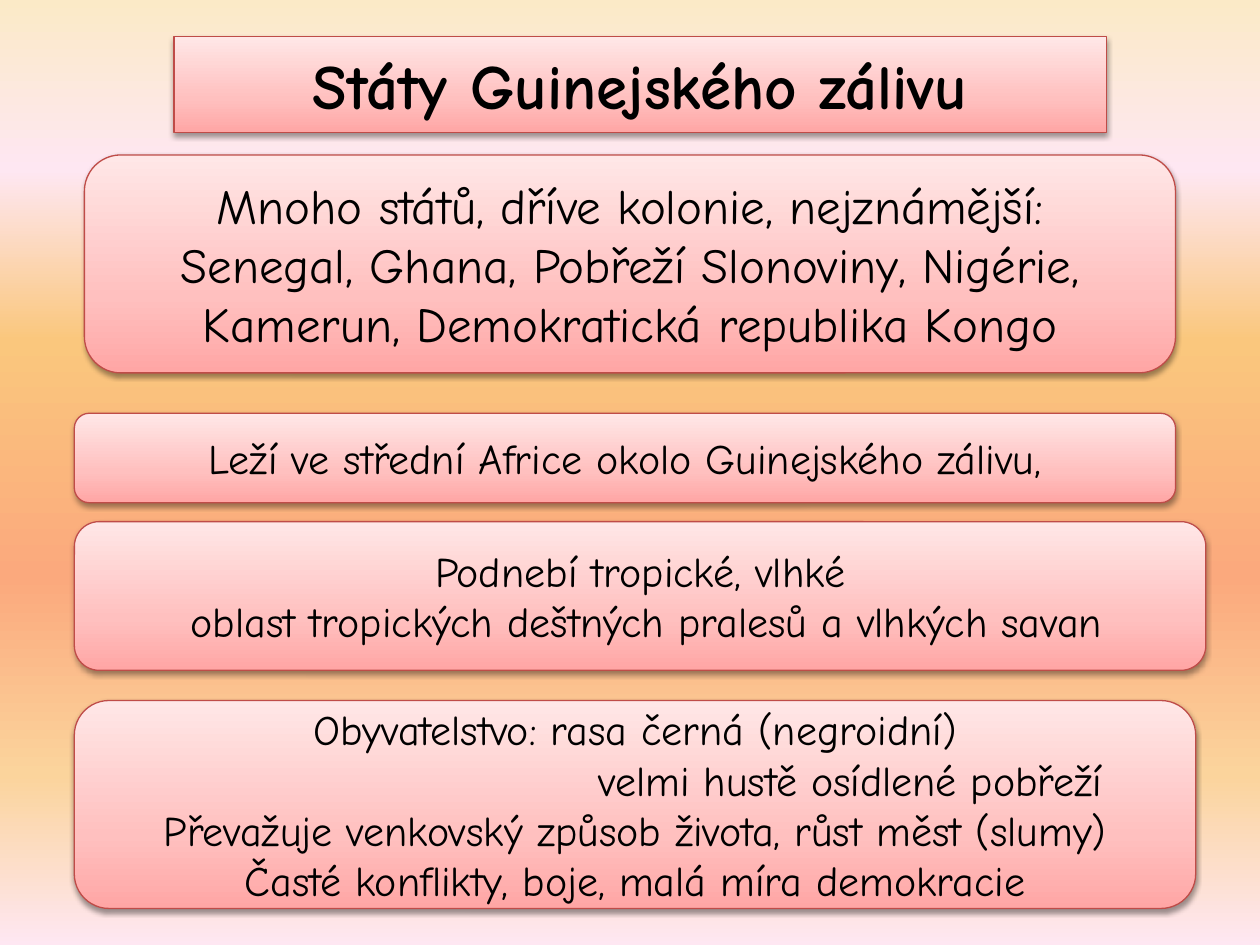
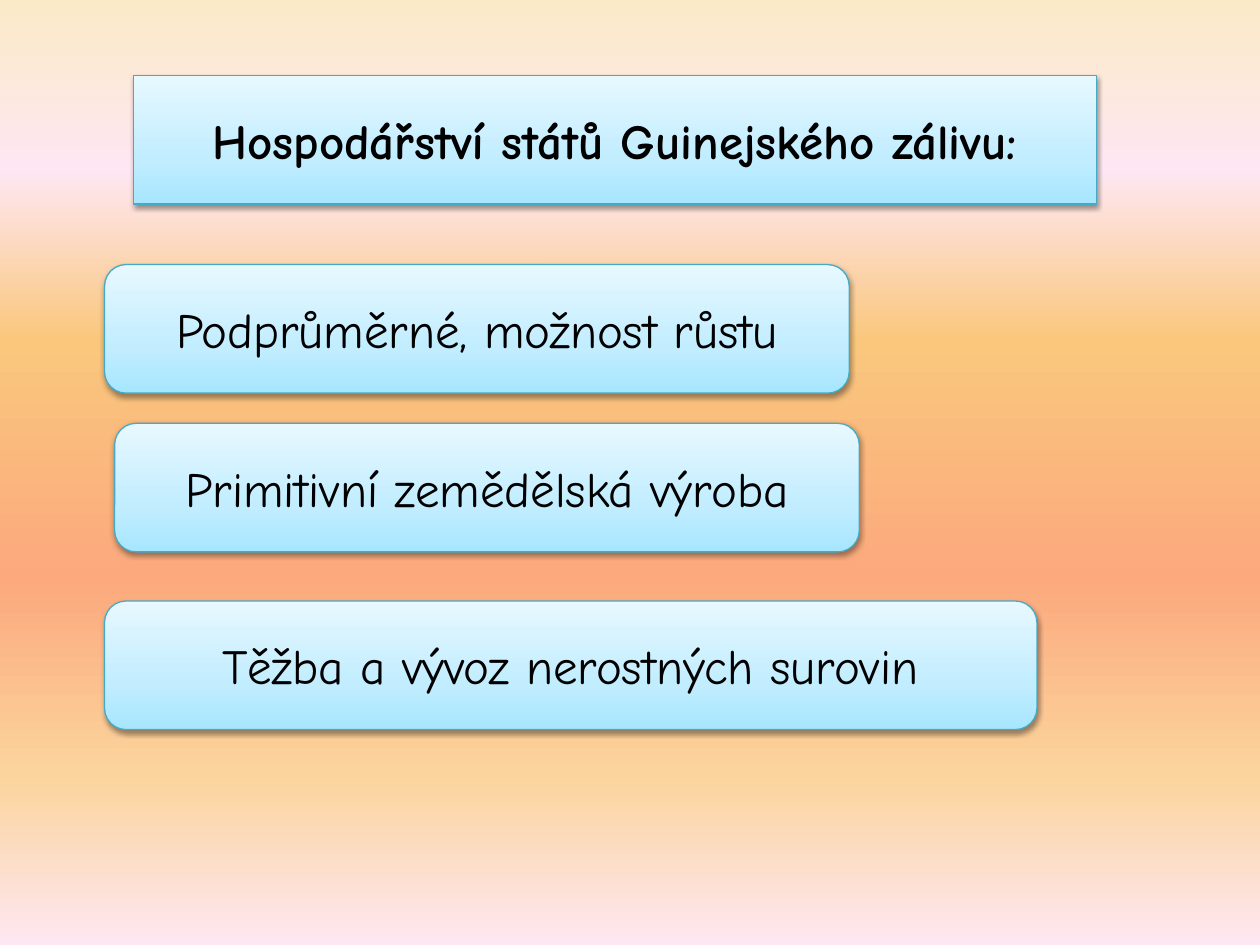
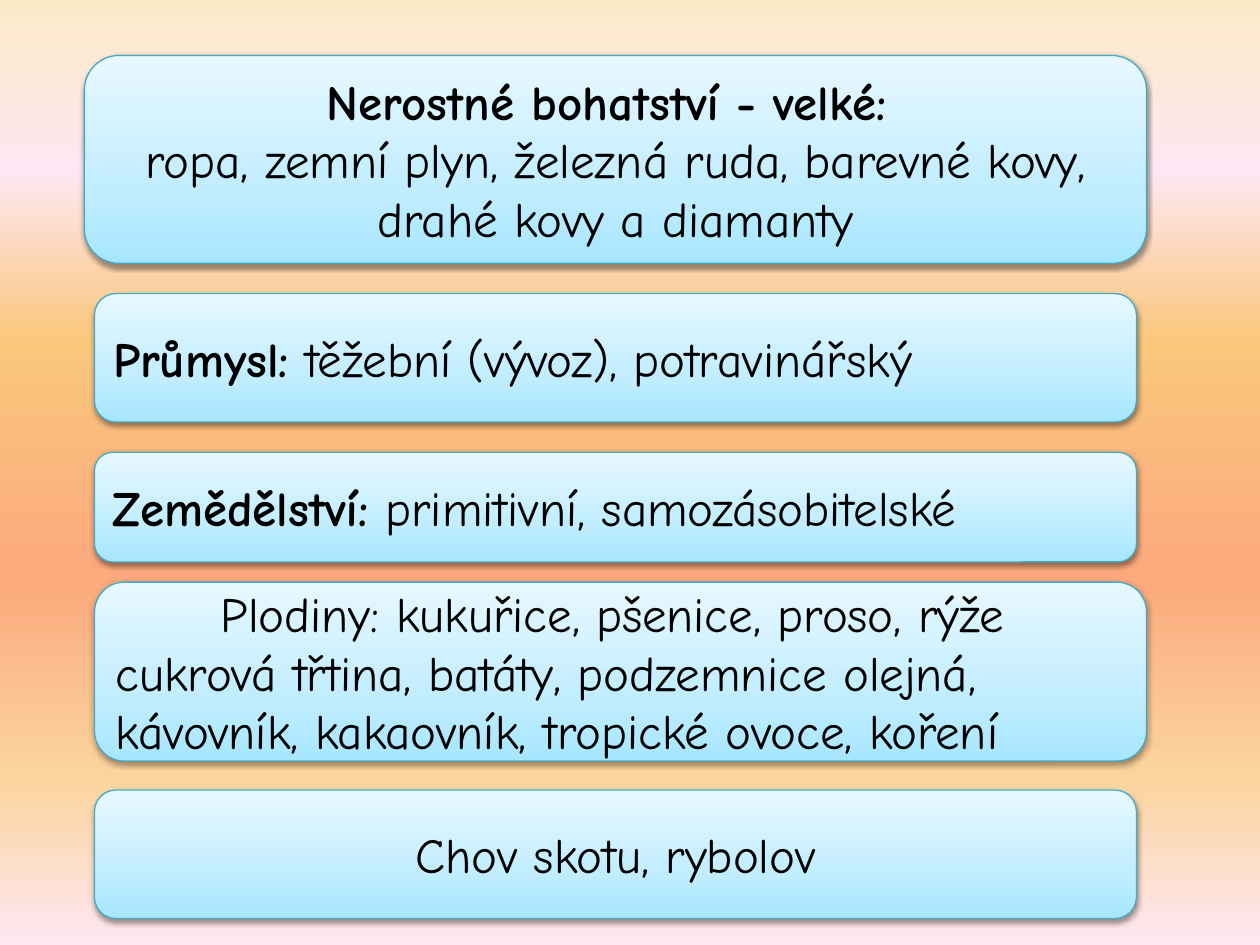
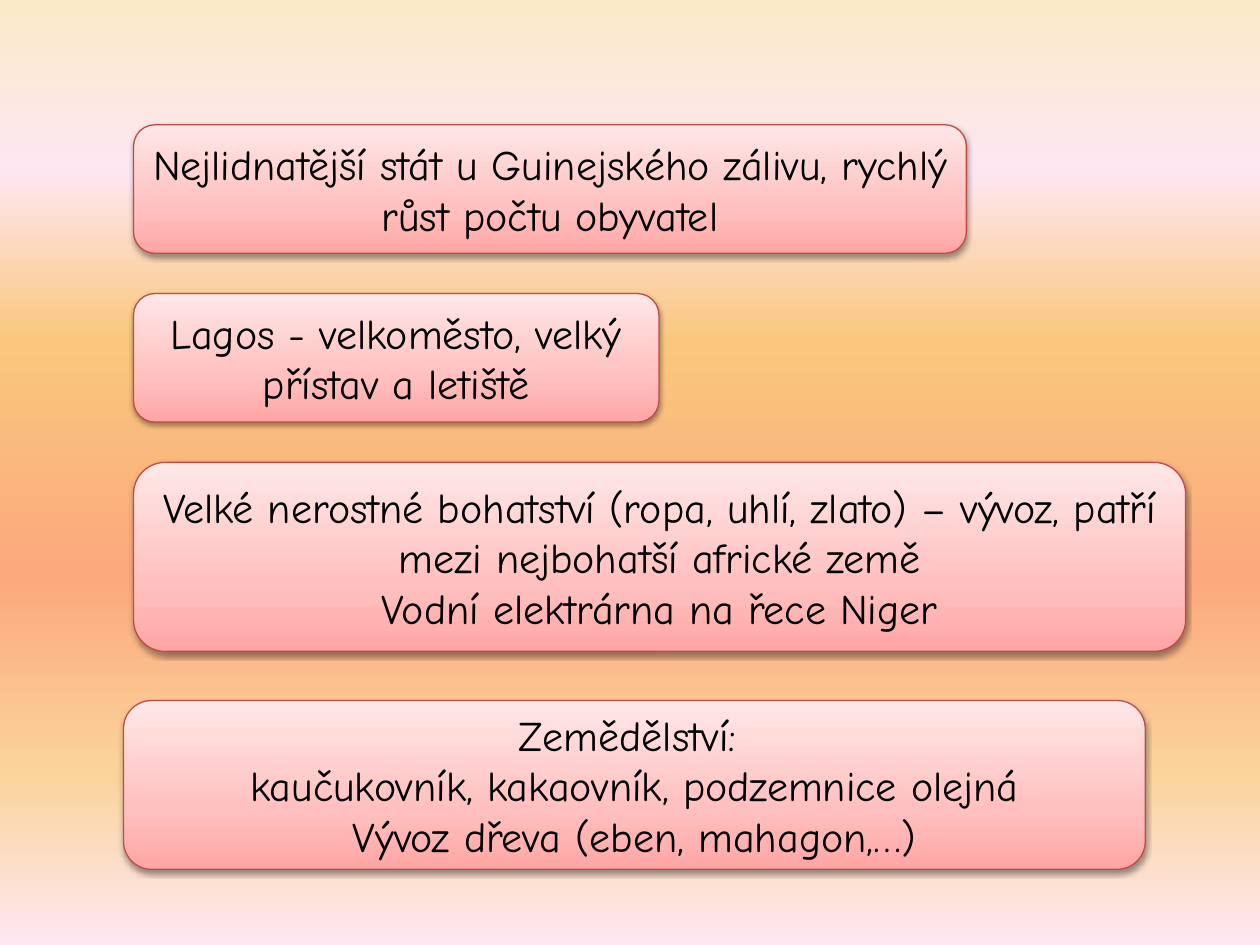
from copy import deepcopy
from dataclasses import dataclass

from lxml import etree
from pptx import Presentation
from pptx import util as u
from pptx.dml.color import RGBColor
from pptx.enum import shapes, text
from pptx.oxml import ns

FONT = "Comic Neue"
TITLE_ONLY, BLANK = 5, 6
CENTER, LEFT = text.PP_ALIGN.CENTER, text.PP_ALIGN.LEFT

BLACK = RGBColor(0x00, 0x00, 0x00)
CREAM = RGBColor(0xFB, 0xEA, 0xC7)
BLUSH = RGBColor(0xFE, 0xE7, 0xF2)
AMBER = RGBColor(0xFA, 0xC7, 0x7D)
CORAL = RGBColor(0xFB, 0xA9, 0x7D)
SAND = RGBColor(0xFB, 0xD4, 0x9C)
RED_LINE = RGBColor(0xBF, 0x4C, 0x48)
RED_DARK = RGBColor(0xFF, 0xA6, 0xA5)
RED_MID = RGBColor(0xFF, 0xC0, 0xBF)
RED_LIGHT = RGBColor(0xFF, 0xE7, 0xE7)
BLUE_LINE = RGBColor(0x46, 0xAA, 0xC5)
BLUE_DARK = RGBColor(0xA7, 0xE6, 0xFF)
BLUE_MID = RGBColor(0xC1, 0xED, 0xFF)
BLUE_LIGHT = RGBColor(0xE7, 0xF8, 0xFF)

SUNSET = [(0, CREAM), (0.18, BLUSH), (0.36, AMBER),
          (0.61, CORAL), (0.82, SAND), (1, BLUSH)]


@dataclass
class Theme:
    line: RGBColor
    stops: list


@dataclass
class Line:
    text: str
    lead: str = ""
    bold: bool = False
    align: int = CENTER
    indent: float = 0


RED = Theme(RED_LINE, [(0, RED_DARK), (0.35, RED_MID), (1, RED_LIGHT)])
BLUE = Theme(BLUE_LINE, [(0, BLUE_DARK), (0.35, BLUE_MID), (1, BLUE_LIGHT)])


def set_gradient(fill, stops, angle):
    fill.gradient()
    fill.gradient_angle = angle
    first = fill.gradient_stops[0]._gs
    for _ in stops[2:]:
        first.getparent().append(deepcopy(first))
    for stop, (position, color) in zip(fill.gradient_stops, stops):
        stop.position = position
        stop.color.rgb = color


def add_shadow(box):
    box.shadow.inherit = False
    effects = box._element.spPr.find(ns.qn("a:effectLst"))
    shadow = etree.SubElement(effects, ns.qn("a:outerShdw"), blurRad="40000",
                              dist="20000", dir="5400000", rotWithShape="0")
    color = etree.SubElement(shadow, ns.qn("a:srgbClr"), val=str(BLACK))
    etree.SubElement(color, ns.qn("a:alpha"), val="38000")


def style_box(box, theme):
    set_gradient(box.fill, theme.stops, 90)
    box.line.color.rgb = theme.line
    box.line.width = u.Pt(0.75)
    add_shadow(box)


def write_lines(box, lines, size):
    frame = box.text_frame
    frame.word_wrap = True
    frame.auto_size = text.MSO_AUTO_SIZE.NONE
    frame.vertical_anchor = text.MSO_ANCHOR.MIDDLE
    for number, line in enumerate(lines):
        para = frame.add_paragraph() if number else frame.paragraphs[0]
        para.alignment = line.align
        para.font.name = FONT
        para.font.size = u.Pt(size)
        para.font.bold = line.bold
        para.font.color.rgb = BLACK
        if line.indent:
            para._p.get_or_add_pPr().set("marL", str(u.Inches(line.indent)))
        if line.lead:
            span = para.add_run()
            span.text = line.lead
            span.font.bold = True
        para.add_run().text = line.text


def add_box(page, theme, place, size, *lines):
    box = page.shapes.add_shape(shapes.MSO_SHAPE.ROUNDED_RECTANGLE,
                                *map(u.Inches, place))
    style_box(box, theme)
    write_lines(box, [Line(line) if isinstance(line, str) else line
                      for line in lines], size)


def add_title(page, theme, place, size, wording):
    box = page.shapes.title
    box.left, box.top, box.width, box.height = map(u.Inches, place)
    outline = etree.Element(ns.qn("a:prstGeom"), prst="roundRect")
    etree.SubElement(outline, ns.qn("a:avLst"))
    box._element.spPr.insert(1, outline)
    style_box(box, theme)
    write_lines(box, [Line(wording, bold=True)], size)


def add_page(deck, layout):
    return deck.slides.add_slide(deck.slide_layouts[layout])


def build_states(deck):
    page = add_page(deck, TITLE_ONLY)
    add_title(page, RED, (1.38, 0.29, 7.4, 0.76), 36,
              "Státy Guinejského zálivu")
    add_box(page, RED, (0.59, 3.28, 8.74, 0.71), 24,
            "Leží ve střední Africe okolo Guinejského zálivu,")
    add_box(page, RED, (0.59, 4.14, 8.98, 1.18), 24,
            "Podnebí tropické, vlhké",
            Line("oblast tropických deštných pralesů a vlhkých savan",
                 indent=0.1))
    add_box(page, RED, (0.59, 5.56, 8.9, 1.65), 24,
            "Obyvatelstvo: rasa černá (negroidní)",
            Line("velmi hustě osídlené pobřeží", indent=3.42),
            "Převažuje venkovský způsob života, růst měst (slumy)",
            "Časté konflikty, boje, malá míra demokracie")
    add_box(page, RED, (0.67, 1.23, 8.66, 1.73), 28,
            "Mnoho států, dříve kolonie, nejznámější:",
            "Senegal, Ghana, Pobřeží Slonoviny, Nigérie, "
            "Kamerun, Demokratická republika Kongo")


def build_economy(deck):
    page = add_page(deck, TITLE_ONLY)
    add_title(page, BLUE, (1.06, 0.6, 7.64, 1.02), 28,
              "Hospodářství států Guinejského zálivu:")
    for left, top, width, wording in (
            (0.83, 2.1, 5.91, "Podprůměrné, možnost růstu"),
            (0.91, 3.36, 5.91, "Primitivní zemědělská výroba"),
            (0.83, 4.77, 7.4, "Těžba a vývoz nerostných surovin")):
        add_box(page, BLUE, (left, top, width, 1.02), 28, wording)


def build_resources(deck):
    page = add_page(deck, BLANK)
    add_box(page, BLUE, (0.67, 0.44, 8.43, 1.65), 28,
            Line("Nerostné bohatství - velké: ", bold=True),
            "ropa, zemní plyn, železná ruda, barevné kovy, "
            "drahé kovy a diamanty")
    add_box(page, BLUE, (0.75, 2.33, 8.27, 1.02), 28,
            Line(" těžební (vývoz), potravinářský", "Průmysl:", align=LEFT))
    add_box(page, BLUE, (0.75, 3.59, 8.27, 0.87), 28,
            Line("primitivní, samozásobitelské", "Zemědělství: ", align=LEFT))
    add_box(page, BLUE, (0.75, 4.62, 8.35, 1.42), 28,
            "Plodiny: kukuřice, pšenice, proso, rýže ",
            Line("cukrová třtina, batáty, podzemnice olejná, "
                 "kávovník, kakaovník, tropické ovoce, koření", align=LEFT))
    add_box(page, BLUE, (0.75, 6.27, 8.27, 1.02), 28, "Chov skotu, rybolov")


def build_richest_state(deck):
    page = add_page(deck, BLANK)
    add_box(page, RED, (1.06, 0.99, 6.61, 1.02), 24,
            "Nejlidnatější stát u Guinejského zálivu, "
            "rychlý růst počtu obyvatel")
    add_box(page, RED, (1.06, 3.67, 8.35, 1.5), 24,
            "Velké nerostné bohatství (ropa, uhlí, zlato) – vývoz, "
            "patří mezi nejbohatší africké země",
            "Vodní elektrárna na řece Niger")
    add_box(page, RED, (0.98, 5.56, 8.11, 1.34), 24,
            "Zemědělství: ",
            "kaučukovník, kakaovník, podzemnice olejná",
            "Vývoz dřeva (eben, mahagon,…)")
    add_box(page, RED, (1.06, 2.33, 4.17, 1.02), 24,
            "Lagos - velkoměsto, velký přístav a letiště")


def main():
    deck = Presentation()
    deck.slide_width, deck.slide_height = u.Inches(10), u.Inches(7.5)
    set_gradient(deck.slide_master.background.fill, SUNSET, 270)
    build_states(deck)
    build_economy(deck)
    build_resources(deck)
    build_richest_state(deck)
    deck.save("out.pptx")


if __name__ == "__main__":
    main()
